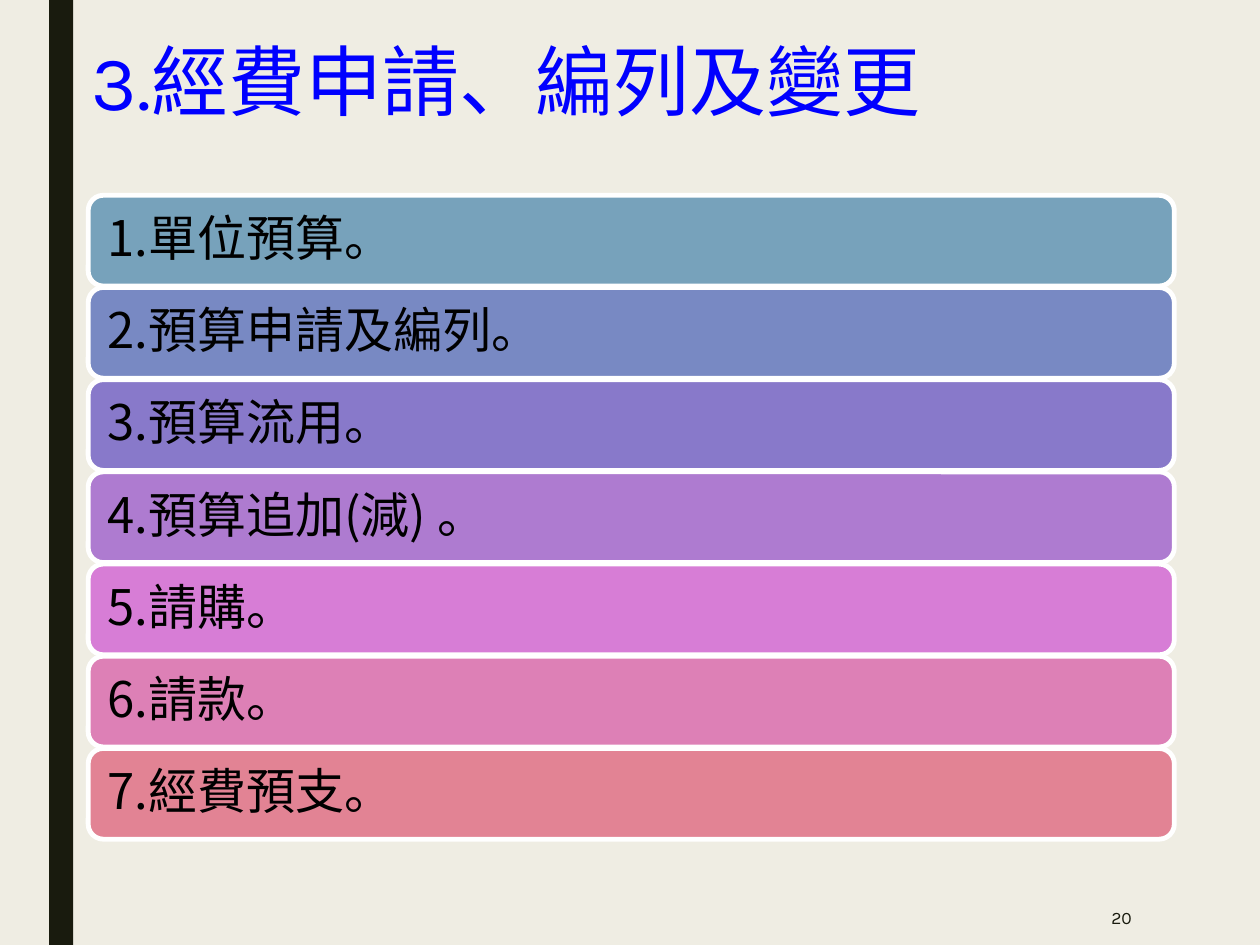
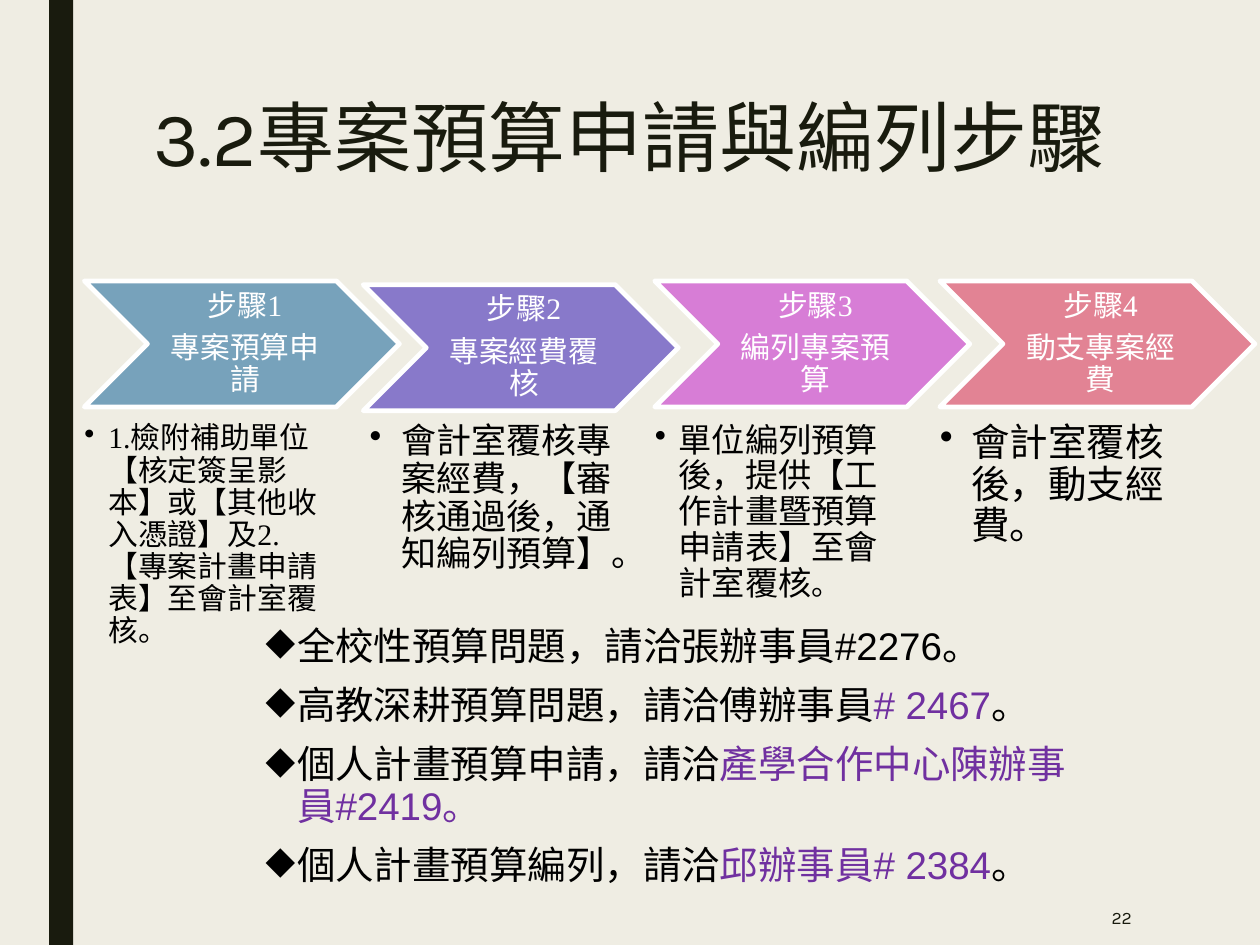
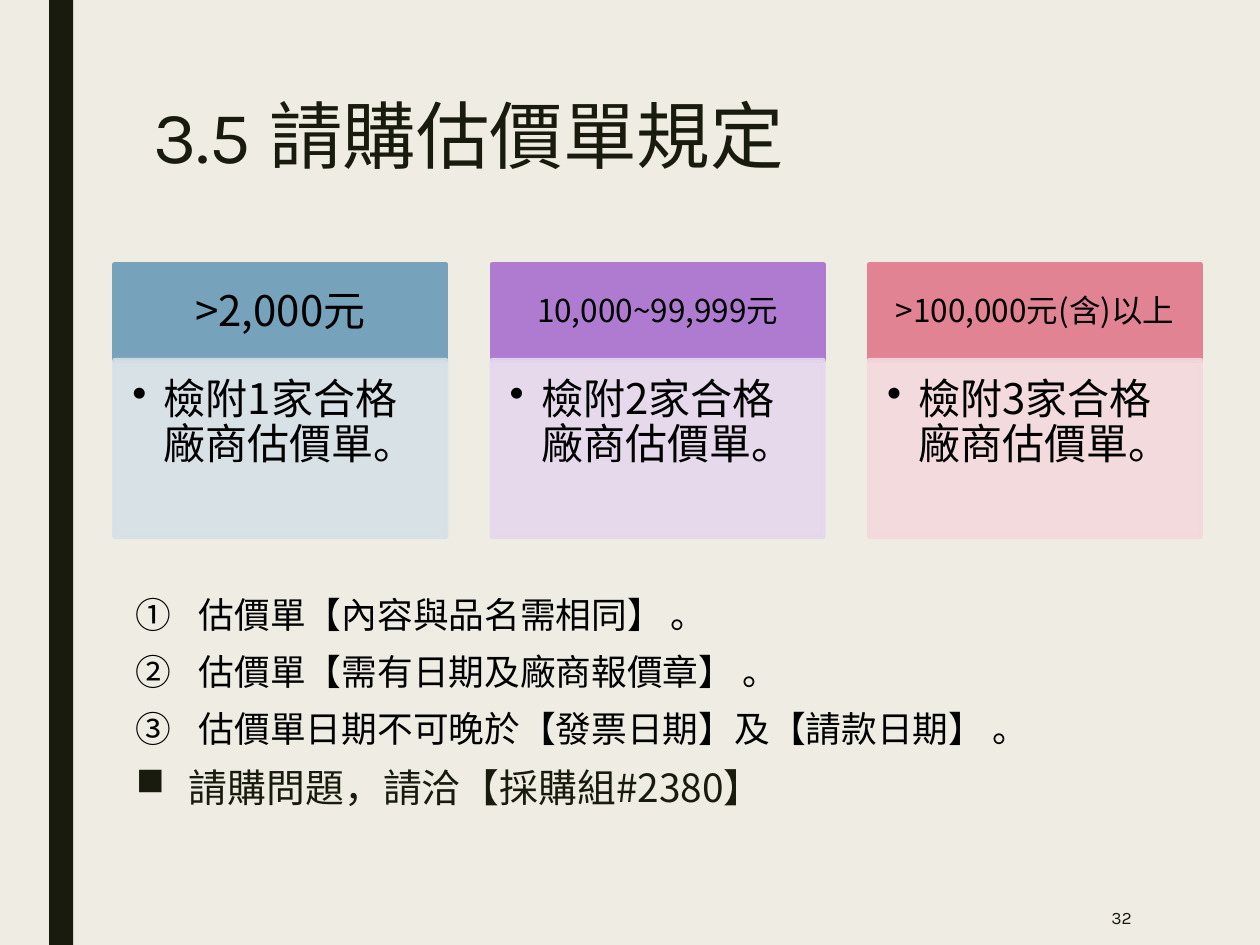
"""Build three slides on budget requests, project budgeting steps and quotation rules."""
from lxml import etree
from pptx import Presentation
from pptx.dml.color import RGBColor
from pptx.enum.shapes import MSO_SHAPE as Preset
from pptx.enum.text import MSO_ANCHOR as Anchor, PP_ALIGN as Align
from pptx.oxml.ns import qn
from pptx.util import Inches, Pt

CREAM = RGBColor(0xEF, 0xED, 0xE3)
INK = RGBColor(0x19, 0x1B, 0x0E)
BLACK = RGBColor(0, 0, 0)
WHITE = RGBColor(0xFF, 0xFF, 0xFF)
BRIGHT_BLUE = RGBColor(0, 0, 0xFF)
PURPLE = RGBColor(0x70, 0x30, 0xA0)
TEAL = RGBColor(0x77, 0xA2, 0xBB)
SLATE = RGBColor(0x78, 0x89, 0xC3)
VIOLET = RGBColor(0x88, 0x79, 0xCA)
ORCHID = RGBColor(0xAE, 0x7B, 0xD0)
MAGENTA = RGBColor(0xD7, 0x7D, 0xD6)
PINK = RGBColor(0xDD, 0x80, 0xB6)
CORAL = RGBColor(0xE2, 0x83, 0x94)
PALE_TEAL = RGBColor(0xD6, 0xE0, 0xE7)
PALE_ORCHID = RGBColor(0xE6, 0xD7, 0xEE)
PALE_CORAL = RGBColor(0xF4, 0xD9, 0xDC)
HEADING, SANS, SERIF, LATIN = "Karla", "Noto Sans CJK SC", "Times New Roman", "Arial"
NUMBERED = "circleNumWdWhitePlain"


def add_block(slide, box, fill=None, line=None, preset=Preset.RECTANGLE,
              insets=(0.1, 0.05, 0.1, 0.05), anchor=Anchor.TOP):
    """Add a filled shape, or a plain text box when there is no fill."""
    place = [Inches(length) for length in box]
    if fill is None:
        block = slide.shapes.add_textbox(*place)
    else:
        block = slide.shapes.add_shape(preset, *place)
        block.shadow.inherit = False
        block.fill.solid()
        block.fill.fore_color.rgb = fill
        block.line.color.rgb = line or fill
        block.line.width = Pt(2.75)
    frame = block.text_frame
    frame.word_wrap = True
    frame.vertical_anchor = anchor
    frame.margin_left, frame.margin_top, frame.margin_right, frame.margin_bottom = map(Inches, insets)
    return block


def write(block, lines, font, size, color, align=Align.LEFT, spacing=0.9,
          before=0, after=0, bullet=None, indent=0.25):
    """Write one paragraph per line; a tuple line has every second run in purple."""
    frame = block.text_frame
    for line in lines:
        first = not frame.paragraphs[0].runs
        paragraph = frame.paragraphs[0] if first else frame.add_paragraph()
        if bullet:
            props = paragraph._p.get_or_add_pPr()
            props.set("marL", str(Inches(indent)))
            props.set("indent", str(-Inches(indent)))
            if bullet == NUMBERED:
                etree.SubElement(props, qn("a:buAutoNum")).set("type", bullet)
            else:
                etree.SubElement(props, qn("a:buChar")).set("char", bullet)
        paragraph.alignment = align
        paragraph.line_spacing = spacing
        paragraph.space_before = Pt(before)
        paragraph.space_after = Pt(after)
        paragraph.font.name = font
        paragraph.font.size = Pt(size)
        paragraph.font.color.rgb = color
        for order, text in enumerate([line] if isinstance(line, str) else line):
            run = paragraph.add_run()
            run.text = text
            if order % 2:
                run.font.color.rgb = PURPLE


deck = Presentation()
deck.slide_width, deck.slide_height = Inches(10), Inches(7.5)
deck.slide_master.background.fill.solid()
deck.slide_master.background.fill.fore_color.rgb = CREAM

pages = [
    ("3.經費申請、編列及變更", 44, BRIGHT_BLUE, (0.63, 0.31, 8.62, 1.23), "20"),
    ("3.2專案預算申請與編列步驟", 44, INK, (1.12, 0.75, 7.88, 1.62), "22"),
    ("3.5 請購估價單規定", 42, INK, (1.12, 0.75, 7.88, 1.62), "32"),
]
slides = []
for title, size, color, box, number in pages:
    slide = deck.slides.add_slide(deck.slide_layouts[6])
    side_band = add_block(slide, (0.39, 0, 0.19, 7.5), INK)
    side_band.line.fill.background()
    write(add_block(slide, box), [title], HEADING, size, color, spacing=0.89)
    page_number = add_block(slide, (7.77, 7.06, 1.31, 0.44), anchor=Anchor.MIDDLE)
    write(page_number, [number], HEADING, 10, INK, Align.RIGHT, spacing=1)
    slides.append(slide)
overview, procedure, quotations = slides

topics = [
    ("1.單位預算。", TEAL),
    ("2.預算申請及編列。", SLATE),
    ("3.預算流用。", VIOLET),
    ("4.預算追加(減) 。", ORCHID),
    ("5.請購。", MAGENTA),
    ("6.請款。", PINK),
    ("7.經費預支。", CORAL),
]
topic_pitch = 4.39 / 6
for row, (topic, color) in enumerate(topics):
    topic_bar = add_block(overview, (0.7, 1.55 + row * topic_pitch, 8.62, 0.72), color, WHITE,
                          Preset.ROUNDED_RECTANGLE, (0.12,) * 4, Anchor.MIDDLE)
    write(topic_bar, [topic], SANS, 28, BLACK, after=9.8)

steps = [
    ("專案預算申請", TEAL, 0, 0, 17, 0.19,
     "1.檢附補助單位【核定簽呈影本】或【其他收入憑證】及2.【專案計畫申請表】至會計室覆核。"),
    ("專案經費覆核", VIOLET, -0.05, 0.03, 20, 0.25,
     "會計室覆核專案經費，【審核通過後，通知編列預算】。"),
    ("編列專案預算", MAGENTA, 0, 0, 19, 0.19,
     "單位編列預算後，提供【工作計畫暨預算申請表】至會計室覆核"),
    ("動支專案經費", CORAL, 0, 0, 22, 0.25, "會計室覆核後，動支經費。"),
]
details = []
for column, (step, color, shift_x, shift_y, size, indent, detail) in enumerate(steps):
    left = 0.67 + column * 6.79 / 3
    arrow = add_block(procedure, (left + shift_x, 2.23 + shift_y, 2.5, 1), color, WHITE,
                      Preset.CHEVRON, (0.07, 0.02, 0.02, 0.02), Anchor.MIDDLE)
    write(arrow, [f"步驟{column + 1}", step], SERIF, 17, WHITE, Align.CENTER, after=6)
    detail_text = add_block(procedure, (left, 3.36, 2, 1.67), insets=(0,) * 4)
    write(detail_text, [detail], SERIF, size, BLACK, bullet="•", indent=indent)
    details.append(detail_text)
full_stop = details[2].text_frame.paragraphs[0].add_run()
full_stop.text = "。"
full_stop.font.size = Pt(17)

contacts = [
    "全校性預算問題，請洽張辦事員#2276。",
    ("高教深耕預算問題，請洽傅辦事員", "# 2467", "。"),
    ("個人計畫預算申請，請洽", "產學合作中心陳辦事員#2419。"),
    ("個人計畫預算編列，請洽", "邱辦事員# 2384", "。"),
]
write(add_block(procedure, (2.01, 4.93, 6.61, 2.13)), contacts, LATIN, 22, BLACK,
      before=10, bullet="◆")

rules = [
    "估價單【內容與品名需相同】 。",
    "估價單【需有日期及廠商報價章】 。",
    "估價單日期不可晚於【發票日期】及【請款日期】 。",
]
rule_list = add_block(quotations, (0.98, 4.71, 8.62, 1.8))
write(rule_list, rules, HEADING, 20.4, BLACK, spacing=0.84, before=10, after=2,
      bullet=NUMBERED, indent=0.5)
write(rule_list, ["請購問題，請洽【採購組#2380】"], SANS, 22.2, INK, spacing=0.84, before=10,
      after=2, bullet="■", indent=0.42)

tiers = [
    (">2,000元", 24, (0.19, 0.11, 0.19, 0.11), TEAL, PALE_TEAL),
    ("10,000~99,999元", 18, (0.14, 0.08, 0.14, 0.08), ORCHID, PALE_ORCHID),
    (">100,000元(含)以上", 18, (0.14, 0.08, 0.14, 0.08), CORAL, PALE_CORAL),
]
for column, (amount, size, insets, color, pale) in enumerate(tiers):
    left = 0.91 + column * 5.99 / 2
    tier_head = add_block(quotations, (left, 2.1, 2.63, 0.76), color, insets=insets,
                          anchor=Anchor.MIDDLE)
    write(tier_head, [amount], SANS, size, BLACK, Align.CENTER, after=size * 0.35)
    tier_body = add_block(quotations, (left, 2.86, 2.63, 1.4), pale,
                          insets=(0.14, 0.14, 0.19, 0.21))
    for tint in tier_body._element.spPr.iter(qn("a:srgbClr")):
        etree.SubElement(tint, qn("a:alpha")).set("val", "90000")
    write(tier_body, [f"檢附{column + 1}家合格廠商估價單。"], SANS, 24, BLACK, bullet="•")

deck.save("out.pptx")
